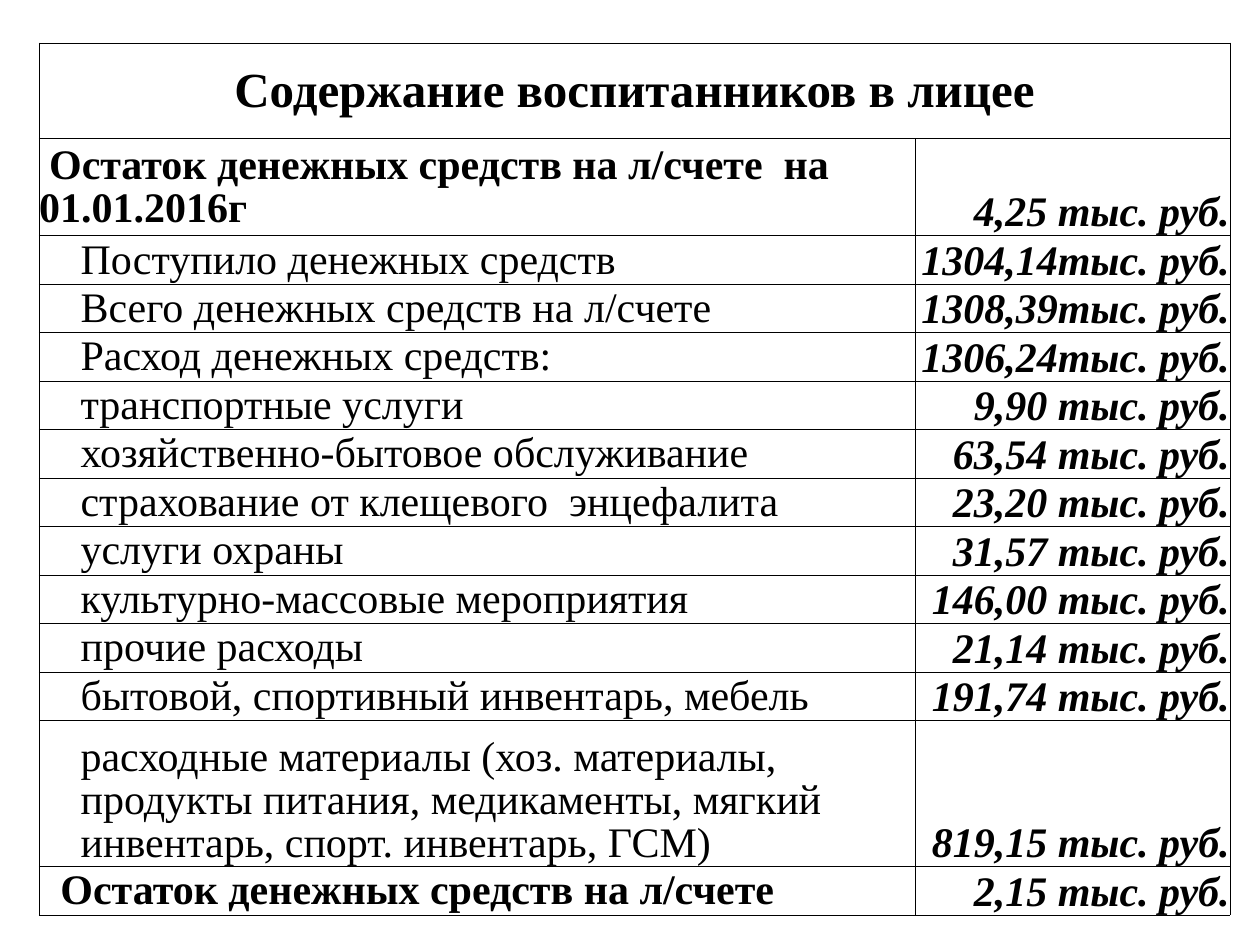
from dataclasses import dataclass

from lxml.etree import SubElement
from pptx import Presentation
from pptx.dml.color import RGBColor
from pptx.enum.text import MSO_ANCHOR, PP_ALIGN
from pptx.oxml.ns import qn
from pptx.table import _Cell
from pptx.util import Inches, Length, Pt


@dataclass(frozen=True)
class Theme:
    font: str = "Times New Roman"
    ink: str = "000000"
    title_size: float = 28
    body_size: float = 24
    line_spacing: float = 0.93
    border: float = 0.23


@dataclass(frozen=True)
class BudgetRow:
    label: str
    amount: str
    bold: bool = False
    indent: Length = Inches(0.33)
    first_line: Length = Inches(0)
    height: Length = Inches(3.85) // 10
    anchor: MSO_ANCHOR = MSO_ANCHOR.MIDDLE


THEME = Theme()
TITLE = "Содержание воспитанников в лицее"
TITLE_HEIGHT = Inches(0.76)
COLUMN_WIDTHS = (Inches(6.95), Inches(2.5))
ROWS = (
    BudgetRow("Остаток денежных средств на л/счете  на 01.01.2016г", "4,25 тыс. руб.",
              bold=True, indent=Inches(0), first_line=Inches(0.08), height=Inches(0.77)),
    BudgetRow("Поступило денежных средств", "1304,14тыс. руб."),
    BudgetRow("Всего денежных средств на л/счете", "1308,39тыс. руб."),
    BudgetRow("Расход денежных средств:", "1306,24тыс. руб."),
    BudgetRow("транспортные услуги", "9,90 тыс. руб."),
    BudgetRow("хозяйственно-бытовое обслуживание", "63,54 тыс. руб."),
    BudgetRow("страхование от клещевого  энцефалита", "23,20 тыс. руб."),
    BudgetRow("услуги охраны", "31,57 тыс. руб."),
    BudgetRow("культурно-массовые мероприятия", "146,00 тыс. руб."),
    BudgetRow("прочие расходы", "21,14 тыс. руб."),
    BudgetRow("бытовой, спортивный инвентарь, мебель", "191,74 тыс. руб."),
    BudgetRow("расходные материалы (хоз. материалы,\n"
              "продукты питания, медикаменты, мягкий\n"
              "инвентарь, спорт. инвентарь, ГСМ)", "819,15 тыс. руб.",
              height=Inches(1.16), anchor=MSO_ANCHOR.BOTTOM),
    BudgetRow("Остаток денежных средств на л/счете", "2,15 тыс. руб.",
              bold=True, indent=Inches(0.17)),
)


def style_cell(cell: _Cell) -> None:
    cell.margin_left = cell.margin_right = cell.margin_bottom = 0
    cell.margin_top = Inches(0.02)
    properties = cell._tc.get_or_add_tcPr()
    for side in ("lnL", "lnR", "lnT", "lnB"):
        line = SubElement(properties, qn(f"a:{side}"), w=str(Pt(THEME.border)))
        fill = SubElement(line, qn("a:solidFill"))
        SubElement(fill, qn("a:srgbClr"), val=THEME.ink)
    cell.fill.background()


def write_cell(cell: _Cell, text: str, *, size: float = THEME.body_size,
               bold: bool = False, italic: bool = False,
               align: PP_ALIGN = PP_ALIGN.LEFT,
               anchor: MSO_ANCHOR = MSO_ANCHOR.MIDDLE,
               indent: Length = Inches(0), first_line: Length = Inches(0)) -> None:
    cell.vertical_anchor = anchor
    cell.text = text
    for para in cell.text_frame.paragraphs:
        para.alignment = align
        para.line_spacing = THEME.line_spacing
        properties = para._p.get_or_add_pPr()
        properties.set("marL", str(indent))
        properties.set("indent", str(first_line))
        for span in para.runs:
            span.font.name = THEME.font
            span.font.size = Pt(size)
            span.font.bold = bold
            span.font.italic = italic
            span.font.color.rgb = RGBColor.from_string(THEME.ink)


def main() -> None:
    deck = Presentation()
    deck.slide_width, deck.slide_height = Inches(10), Inches(7.5)
    page = deck.slides.add_slide(deck.slide_layouts[6])

    heights = (TITLE_HEIGHT, *(row.height for row in ROWS))
    table = page.shapes.add_table(len(heights), len(COLUMN_WIDTHS), Inches(0.31),
                                  Inches(0.34), sum(COLUMN_WIDTHS), sum(heights)).table
    table.first_row = table.horz_banding = False
    for column, width in zip(table.columns, COLUMN_WIDTHS):
        column.width = width
    for table_row, height in zip(table.rows, heights):
        table_row.height = height
    for cell in table.iter_cells():
        style_cell(cell)

    table.cell(0, 0).merge(table.cell(0, 1))
    write_cell(table.cell(0, 0), TITLE, size=THEME.title_size, bold=True,
               align=PP_ALIGN.CENTER)
    for index, row in enumerate(ROWS, start=1):
        write_cell(table.cell(index, 0), row.label, bold=row.bold, anchor=row.anchor,
                   indent=row.indent, first_line=row.first_line)
        write_cell(table.cell(index, 1), row.amount, bold=True, italic=True,
                   align=PP_ALIGN.RIGHT, anchor=MSO_ANCHOR.BOTTOM)

    deck.save("out.pptx")


if __name__ == "__main__":
    main()
